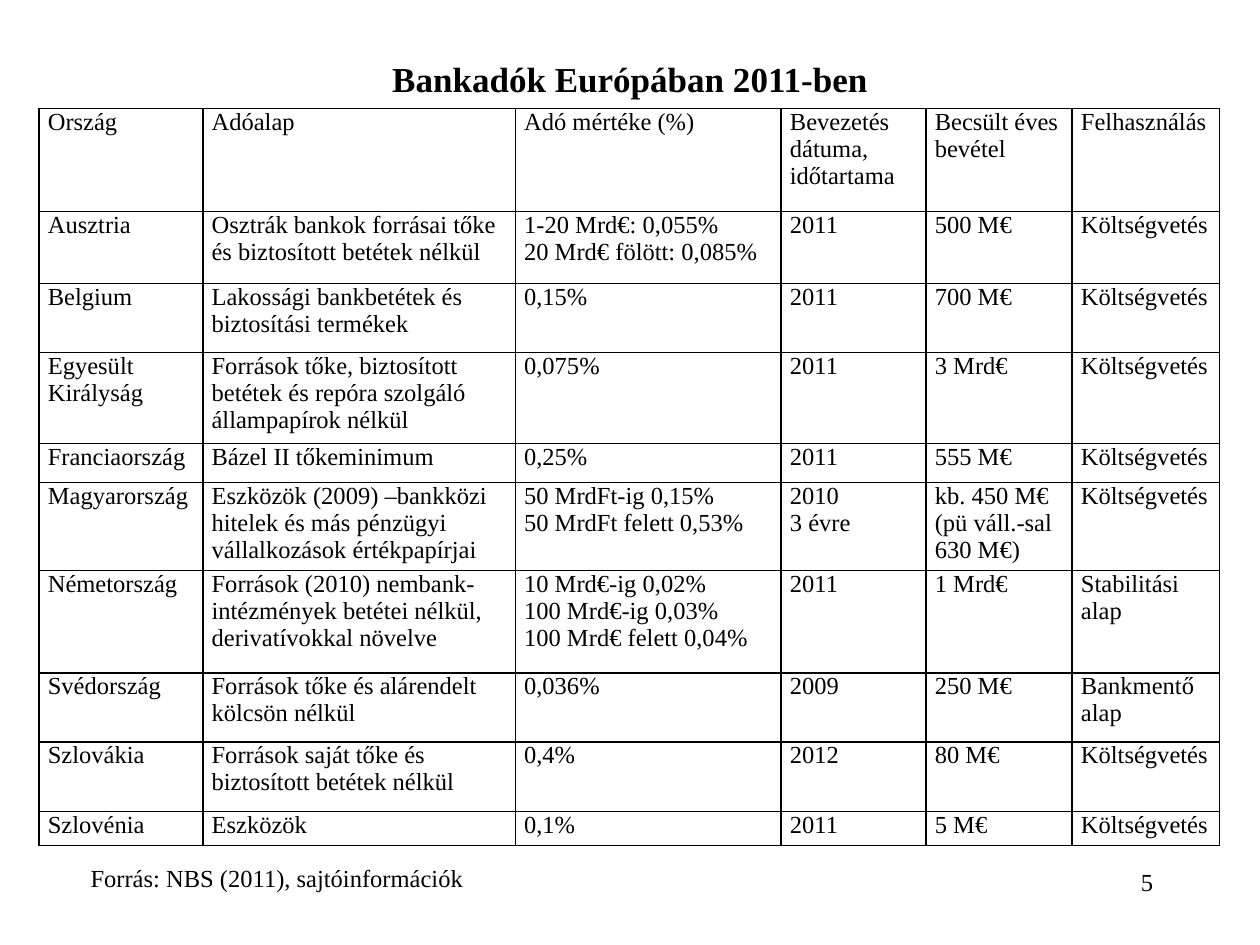
from lxml import etree
from pptx import Presentation
from pptx.dml.color import RGBColor
from pptx.enum import text as tx
from pptx.oxml import ns
from pptx.util import Inches, Pt

BLACK = RGBColor(0, 0, 0)
FONT = "Times New Roman"
COLS = [1.3, 2.48, 2.11, 1.15, 1.16, 1.17]
ROWS = [0.82, 0.57, 0.55, 0.72, 0.31, 0.7, 0.81, 0.55, 0.55, 0.27]
BUDGET = "Költségvetés"
TAXES = [
    ["Ország", "Adóalap", "Adó mértéke (%)", "Bevezetés dátuma, időtartama",
     "Becsült éves bevétel", "Felhasználás"],
    ["Ausztria", "Osztrák bankok forrásai tőke és biztosított betétek nélkül",
     "1-20 Mrd€: 0,055%\n20 Mrd€ fölött: 0,085%", "2011", "500 M€", BUDGET],
    ["Belgium", "Lakossági bankbetétek és biztosítási termékek",
     "0,15%", "2011", "700 M€", BUDGET],
    ["Egyesült Királyság",
     "Források tőke, biztosított betétek és repóra szolgáló állampapírok nélkül",
     "0,075%", "2011", "3 Mrd€", BUDGET],
    ["Franciaország", "Bázel II tőkeminimum", "0,25%", "2011", "555 M€", BUDGET],
    ["Magyarország",
     "Eszközök (2009) –bankközi hitelek és más pénzügyi vállalkozások értékpapírjai",
     "50 MrdFt-ig 0,15%\n50 MrdFt felett 0,53%", "2010\n3 évre",
     "kb. 450 M€ (pü váll.-sal 630 M€)", BUDGET],
    ["Németország",
     "Források (2010) nembank-intézmények betétei nélkül, derivatívokkal növelve",
     "10 Mrd€-ig 0,02%\n100 Mrd€-ig 0,03%\n100 Mrd€ felett 0,04%",
     "2011", "1 Mrd€", "Stabilitási alap"],
    ["Svédország", "Források tőke és alárendelt kölcsön nélkül",
     "0,036%", "2009", "250 M€", "Bankmentő alap"],
    ["Szlovákia", "Források saját tőke és biztosított betétek nélkül",
     "0,4%", "2012", "80 M€", BUDGET],
    ["Szlovénia", "Eszközök", "0,1%", "2011", "5 M€", BUDGET],
]


def write(para, words, size=14, bold=False):
    for i, line in enumerate(words.split("\n")):
        if i:
            para.add_line_break()
        run = para.add_run()
        run.text = line
        run.font.name = FONT
        run.font.size = Pt(size)
        run.font.bold = bold
        run.font.color.rgb = BLACK


def label(slide, box, words, size=14, bold=False,
          align=tx.PP_ALIGN.LEFT, anchor=tx.MSO_ANCHOR.TOP):
    frame = slide.shapes.add_textbox(*map(Inches, box)).text_frame
    frame.word_wrap = True
    frame.vertical_anchor = anchor
    para = frame.paragraphs[0]
    para.alignment = align
    write(para, words, size, bold)


def border(cell):
    props = cell._tc.get_or_add_tcPr()
    for i, side in enumerate(["lnL", "lnR", "lnT", "lnB"]):
        line = etree.Element(ns.qn("a:" + side), w=str(Pt(1)))
        fill = etree.SubElement(line, ns.qn("a:solidFill"))
        etree.SubElement(fill, ns.qn("a:srgbClr"), val=str(BLACK))
        props.insert(i, line)


def grid(slide, box):
    table = slide.shapes.add_table(len(ROWS), len(COLS), *map(Inches, box)).table
    table.first_row = table.horz_banding = False
    for col, width in zip(table.columns, COLS):
        col.width = Inches(width)
    for row, height, words in zip(table.rows, ROWS, TAXES):
        row.height = Inches(height)
        for i, (cell, word) in enumerate(zip(row.cells, words)):
            cell.margin_left = cell.margin_right = Inches(0.07)
            cell.margin_top = cell.margin_bottom = 0
            cell.fill.background()
            border(cell)
            para = cell.text_frame.paragraphs[0]
            para.space_before = Pt(12)
            if i == len(COLS) - 1:
                para.space_after = Pt(6)
            write(para, word)


def main():
    deck = Presentation()
    deck.slide_width, deck.slide_height = Inches(10), Inches(7.5)
    slide = deck.slides.add_slide(deck.slide_layouts[6])
    label(slide, (0.75, 0.47, 8.5, 0.31), "Bankadók Európában 2011-ben", 20, True,
          tx.PP_ALIGN.CENTER, tx.MSO_ANCHOR.MIDDLE)
    label(slide, (7.17, 6.83, 2.08, 0.5), "5", align=tx.PP_ALIGN.RIGHT)
    grid(slide, (0.31, 0.86, sum(COLS), sum(ROWS)))
    label(slide, (0.62, 6.8, 8.05, 0.34), "Forrás: NBS (2011), sajtóinformációk")
    deck.save("out.pptx")


if __name__ == "__main__":
    main()
